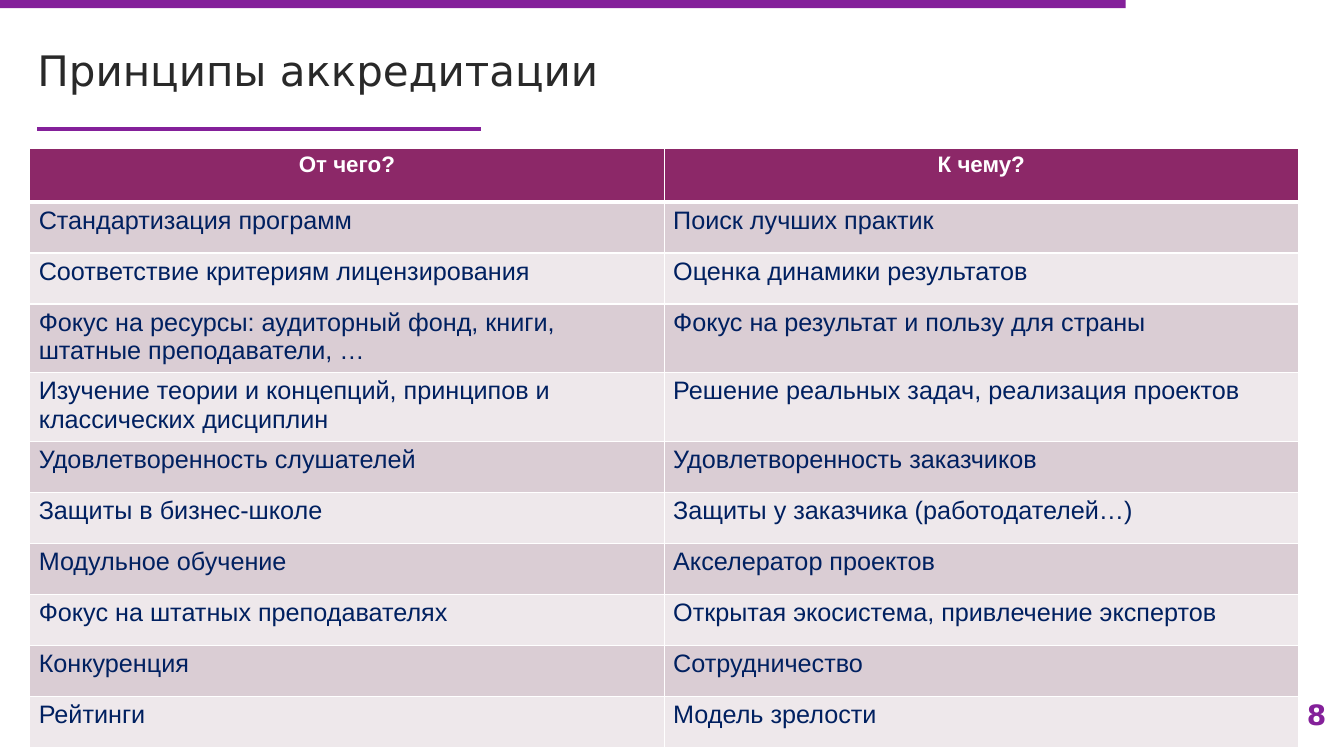
from lxml import etree
from pptx import Presentation
from pptx.dml.color import RGBColor
from pptx.enum import shapes, text
from pptx.oxml import ns
from pptx.util import Pt

COLORS = {
    "purple": "84209A",
    "title": "292929",
    "header": "8C2868",
    "odd": "DACDD4",
    "even": "EEE8EB",
    "navy": "002060",
    "white": "FFFFFF",
}
HEADER = ("От чего?", "К чему?")
PRINCIPLES = [
    ("Стандартизация программ", "Поиск лучших практик"),
    ("Соответствие критериям лицензирования", "Оценка динамики результатов"),
    ("Фокус на ресурсы: аудиторный фонд, книги, штатные преподаватели, …",
     "Фокус на результат и пользу для страны"),
    ("Изучение теории и концепций, принципов и классических дисциплин",
     "Решение реальных задач, реализация проектов"),
    ("Удовлетворенность слушателей", "Удовлетворенность заказчиков"),
    ("Защиты в бизнес-школе", "Защиты у заказчика (работодателей…)"),
    ("Модульное обучение", "Акселератор проектов"),
    ("Фокус на штатных преподавателях",
     "Открытая экосистема, привлечение экспертов"),
    ("Конкуренция", "Сотрудничество"),
    ("Рейтинги", "Модель зрелости"),
]
TWO_LINE_ROWS = (3, 4)


def rgb(name):
    return RGBColor.from_string(COLORS[name])


def write(tf, content, size, font, color, bold=False,
          align=text.PP_ALIGN.LEFT):
    tf.word_wrap = True
    p = tf.paragraphs[0]
    p.text = content
    p.alignment = align
    p.font.size = Pt(size)
    p.font.name = font
    p.font.bold = bold
    p.font.color.rgb = rgb(color)


def add_bar(s, left, top, width, height):
    sp = s.shapes.add_shape(shapes.MSO_SHAPE.RECTANGLE, Pt(left), Pt(top),
                            Pt(width), Pt(height))
    sp.shadow.inherit = False
    sp.fill.solid()
    sp.fill.fore_color.rgb = rgb("purple")
    sp.line.fill.background()


def add_rule(s, left, top, width):
    line = s.shapes.add_connector(shapes.MSO_CONNECTOR.STRAIGHT, Pt(left),
                                  Pt(top), Pt(left + width), Pt(top))
    line.line.color.rgb = rgb("purple")
    line.line.width = Pt(2.25)
    etree.SubElement(line._element.spPr, ns.qn("a:effectLst"))


def set_title(s, content):
    sp = s.shapes.title
    sp.left, sp.top, sp.width, sp.height = Pt(19.5), Pt(8.6), Pt(891), Pt(83)
    sp.text_frame.vertical_anchor = text.MSO_ANCHOR.MIDDLE
    write(sp.text_frame, content, 30, "DejaVu Sans", "title")


def add_page_number(s, number):
    sp = s.shapes.add_textbox(Pt(858), Pt(485), Pt(96.5), Pt(51))
    sp.text_frame.vertical_anchor = text.MSO_ANCHOR.MIDDLE
    write(sp.text_frame, number, 20, "DejaVu Sans", "purple", True,
          text.PP_ALIGN.RIGHT)


def set_borders(cell, bottom):
    tc_pr = cell._tc.get_or_add_tcPr()
    for side, width in (("L", 1), ("R", 1), ("T", 1), ("B", bottom)):
        ln = etree.SubElement(tc_pr, ns.qn(f"a:ln{side}"), w=str(Pt(width)))
        fill = etree.SubElement(ln, ns.qn("a:solidFill"))
        etree.SubElement(fill, ns.qn("a:srgbClr"), val=COLORS["white"])


def format_cell(cell, fill, bottom=1):
    cell.margin_left = cell.margin_right = Pt(6.5)
    cell.margin_top = cell.margin_bottom = Pt(3)
    set_borders(cell, bottom)
    cell.fill.solid()
    cell.fill.fore_color.rgb = rgb(fill)


def add_principles_table(s):
    heights = [38.6] + [47.4 if i in TWO_LINE_ROWS else 36.4
                        for i in range(1, len(PRINCIPLES) + 1)]
    table = s.shapes.add_table(len(heights), len(HEADER), Pt(21.2), Pt(105.8),
                               Pt(906.4), Pt(sum(heights))).table
    for row, height in zip(table.rows, heights):
        row.height = Pt(height)
    # Header row
    for col, content in enumerate(HEADER):
        cell = table.cell(0, col)
        format_cell(cell, "header", bottom=3)
        write(cell.text_frame, content, 16, "Arial", "white", True,
              text.PP_ALIGN.CENTER)
    # Banded body rows
    for i, principle in enumerate(PRINCIPLES, 1):
        for col, content in enumerate(principle):
            cell = table.cell(i, col)
            format_cell(cell, "odd" if i % 2 else "even",)
            write(cell.text_frame, content, 18, "Arial", "navy")


def main():
    prs = Presentation()
    prs.slide_width, prs.slide_height = Pt(960), Pt(540)
    s = prs.slides.add_slide(prs.slide_layouts[5])
    # Frame of the slide
    add_rule(s, 26.6, 92.2, 317)
    add_bar(s, 0, 0, 804, 5.8)
    # Content
    set_title(s, "Принципы аккредитации")
    add_page_number(s, "8")
    add_principles_table(s)
    prs.save("out.pptx")


if __name__ == "__main__":
    main()
